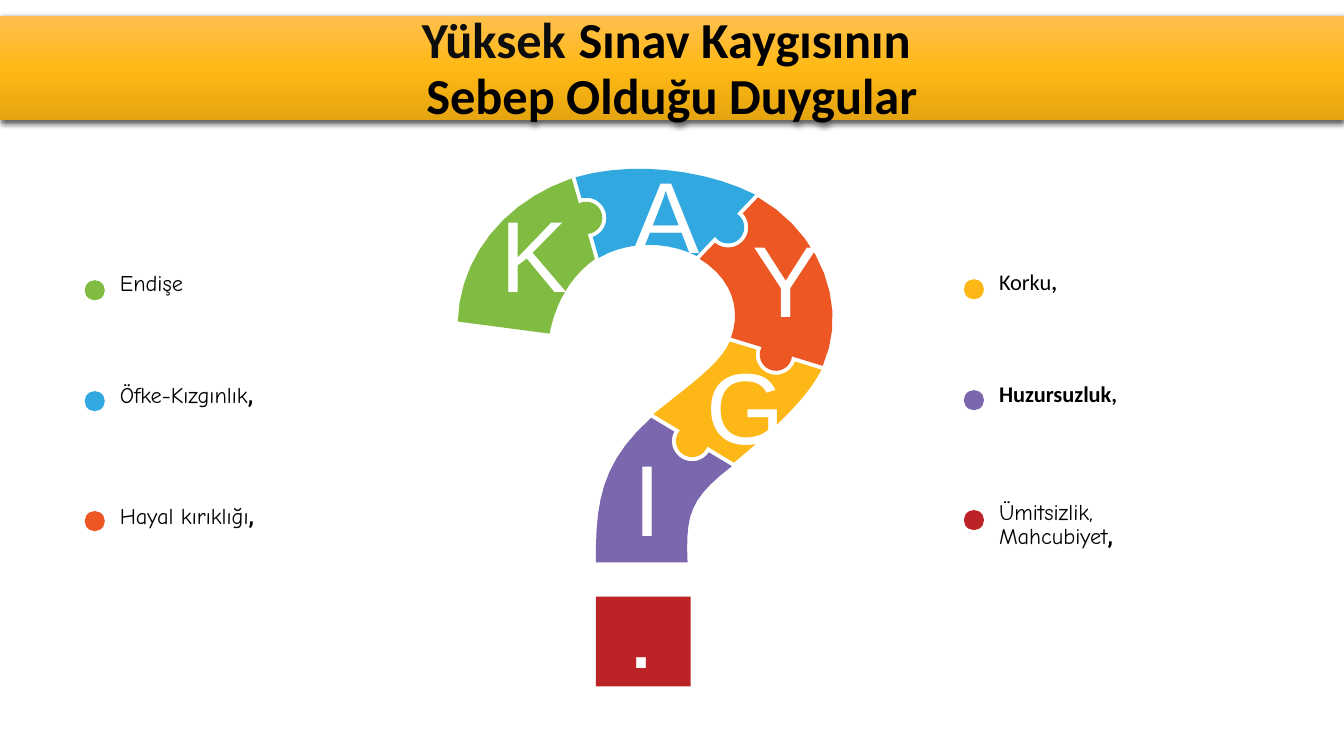
import math

import pptx
import pptx.dml.color
import pptx.enum.shapes
import pptx.enum.text
import pptx.oxml
import pptx.oxml.ns
import pptx.util

PX = 9144
STEPS = 10
SEAM_GAP = 4
KNOB_RADIUS = 16
KNOB_OFFSET = 3
GREEN, BLUE, ORANGE = "7FBC41", "31A8DF", "EC5724"
YELLOW, PURPLE, RED = "FDB817", "7B67AD", "BB2326"
BLACK, NEAR_BLACK, WHITE = "000000", "0D0D0D", "FFFFFF"
SHAPES = pptx.enum.shapes.MSO_SHAPE
ALIGN = pptx.enum.text.PP_ALIGN
ANCHOR = pptx.enum.text.MSO_ANCHOR

SEAMS = [((545, 331), (454, 319)), ((590, 257), (567, 177)),
         ((691, 254), (749, 193)), ((725, 335), (816, 363)),
         ((648, 411), (728, 459)), ((591, 558), (682, 558))]
PIECES = [
    (GREEN, [(551, 301), (565, 275)], [(456, 255), (500, 200)]),
    (BLUE, [(622, 239), (662, 239)], [(625, 160), (697, 167)]),
    (ORANGE, [(727, 277), (735, 308)], [(815, 232), (842, 305)]),
    (YELLOW, [(715, 361), (680, 385)], [(802, 392), (775, 420)]),
    (PURPLE, [(595, 460), (591, 500)], [(684, 495), (680, 510)]),
]
LETTERS = [("K", 496, 225), ("A", 627, 186), ("Y", 746, 249),
           ("G", 701, 375), ("I", 617, 467), (".", 611, 598)]

COMMA = (",", 16, "Roboto", BLACK, True)


def comic(text):
    return (text, 16, "Comic Neue", BLACK, False)


def calibri(text, bold, size=16, color=BLACK):
    return (text, size, "Calibri", color, bold)


ROWS = [(278, 262), (388, 373), (507, 493)]
FEELING_COLUMNS = [
    (84, 0, [
        (GREEN, 89, 37, [[comic("Endişe")]]),
        (BLUE, 176, 37, [[comic("Öfke-Kızgınlık"), COMMA]]),
        (ORANGE, 170, 37, [[comic("Hayal kırıklığı"), COMMA]])]),
    (956, -1, [
        (YELLOW, 79, 64, [[calibri("Korku", False), calibri(",", True)]]),
        (PURPLE, 139, 37, [[calibri("Huzursuzluk,", True)]]),
        (RED, 148, 59, [[comic("Ümitsizlik,")], [comic("Mahcubiyet"), COMMA]])]),
]


def rgb(color):
    return pptx.dml.color.RGBColor.from_string(color)


def paint(sp, color):
    sp.shadow.inherit = False
    sp.fill.solid()
    sp.fill.fore_color.rgb = rgb(color)
    sp.line.fill.background()


def add_preset(s, kind, x, y, w, h, color):
    sp = s.shapes.add_shape(kind, x * PX, y * PX, w * PX, h * PX)
    paint(sp, color)
    return sp


def bezier(p0, controls, p3):
    p1, p2 = controls
    points = []
    for step in range(STEPS + 1):
        t = step / STEPS
        u = 1 - t
        points.append(tuple(
            u**3 * a + 3 * u * u * t * b + 3 * u * t * t * c + t**3 * d
            for a, b, c, d in zip(p0, p1, p2, p3)))
    return points


def seam_points(index, gap):
    inner, outer = SEAMS[index]
    if index in (0, len(SEAMS) - 1):
        return [inner, outer]
    length = math.dist(inner, outer)
    ux, uy = (outer[0] - inner[0]) / length, (outer[1] - inner[1]) / length
    radius, offset = KNOB_RADIUS + gap, KNOB_OFFSET - gap
    tilt = math.asin(offset / radius)
    local = [(0, 0)]
    for step in range(2 * STEPS + 1):
        angle = math.pi + tilt - (math.pi + 2 * tilt) * step / (2 * STEPS)
        local.append((length / 2 + radius * math.cos(angle),
                      offset + radius * math.sin(angle)))
    local.append((length, 0))
    return [(inner[0] + along * ux - (across + gap) * uy,
             inner[1] + along * uy + (across + gap) * ux)
            for along, across in local]


def add_piece(s, index):
    color, inner_controls, outer_controls = PIECES[index]
    socket = seam_points(index, SEAM_GAP)
    tab = seam_points(index + 1, 0)
    outline = (socket + bezier(socket[-1], outer_controls, tab[-1])
               + tab[::-1] + bezier(socket[0], inner_controls, tab[0])[::-1])
    points = [(round(x * PX), round(y * PX)) for x, y in outline]
    builder = s.shapes.build_freeform(*points[0])
    builder.add_line_segments(points[1:], close=True)
    paint(builder.convert_to_shape(), color)


def add_runs(p, runs):
    for text, size, font, color, bold in runs:
        r = p.add_run()
        r.text = text
        r.font.size = pptx.util.Pt(size)
        r.font.name = font
        r.font.bold = bold
        r.font.color.rgb = rgb(color)


def add_label(s, x, y, w, h, paragraphs):
    tf = s.shapes.add_textbox(x * PX, y * PX, w * PX, h * PX).text_frame
    tf.word_wrap = False
    tf.auto_size = pptx.enum.text.MSO_AUTO_SIZE.SHAPE_TO_FIT_TEXT
    for i, runs in enumerate(paragraphs):
        p = tf.add_paragraph() if i else tf.paragraphs[0]
        if len(paragraphs) > 1:
            p.line_spacing = 0.9
        add_runs(p, runs)


def add_letter(s, letter, x, y):
    tf = s.shapes.add_textbox(x * PX, y * PX, 51 * PX, 51 * PX).text_frame
    tf.margin_left = tf.margin_right = tf.margin_top = tf.margin_bottom = 0
    tf.word_wrap = False
    tf.vertical_anchor = ANCHOR.MIDDLE
    p = tf.paragraphs[0]
    p.alignment = ALIGN.CENTER
    add_runs(p, [(letter, 72, "Arial", WHITE, False)])


def add_title(s):
    sp = add_preset(s, SHAPES.RECTANGLE, 0, 16, 1333, 103, "FFB915")
    ns = pptx.oxml.ns
    props = sp._element.spPr
    stops = "".join(
        f'<a:gs pos="{pos}"><a:srgbClr val="{color}"/></a:gs>'
        for pos, color in [(0, "FFBF4E"), (50000, "FFB915"), (100000, "E5A510")])
    props.replace(props.find(ns.qn("a:solidFill")), pptx.oxml.parse_xml(
        f'<a:gradFill {ns.nsdecls("a")}><a:gsLst>{stops}</a:gsLst>'
        '<a:lin ang="5400000" scaled="0"/></a:gradFill>'))
    props.find(ns.qn("a:effectLst")).append(pptx.oxml.parse_xml(
        f'<a:outerShdw {ns.nsdecls("a")} blurRad="57150" dist="19050" dir="5400000" '
        'algn="ctr" rotWithShape="0"><a:srgbClr val="000000">'
        '<a:alpha val="63000"/></a:srgbClr></a:outerShdw>'))
    tf = sp.text_frame
    tf.word_wrap = True
    tf.vertical_anchor = ANCHOR.MIDDLE
    p = tf.paragraphs[0]
    p.alignment = ALIGN.CENTER
    p.line_spacing = 0.9
    add_runs(p, [calibri("Yüksek", True, 36, NEAR_BLACK),
                 calibri(" ", True, 39.6, NEAR_BLACK),
                 calibri("Sınav Kaygısının ", True, 36)])
    p.add_line_break()
    add_runs(p, [calibri("Sebep Olduğu Duygular", True, 36)])


def main():
    prs = pptx.Presentation()
    prs.slide_width, prs.slide_height = 1333 * PX, 750 * PX
    s = prs.slides.add_slide(prs.slide_layouts[6])
    for index in range(len(PIECES)):
        add_piece(s, index)
    add_preset(s, SHAPES.RECTANGLE, 591, 592, 94, 89, RED)
    for x, shift, feelings in FEELING_COLUMNS:
        for (dot_y, text_y), (color, w, h, paragraphs) in zip(ROWS, feelings):
            add_preset(s, SHAPES.OVAL, x, dot_y + shift, 20, 20, color)
            add_label(s, x + 25, text_y + shift, w, h, paragraphs)
    for letter, x, y in LETTERS:
        add_letter(s, letter, x, y)
    add_title(s)
    prs.save("out.pptx")


if __name__ == "__main__":
    main()
